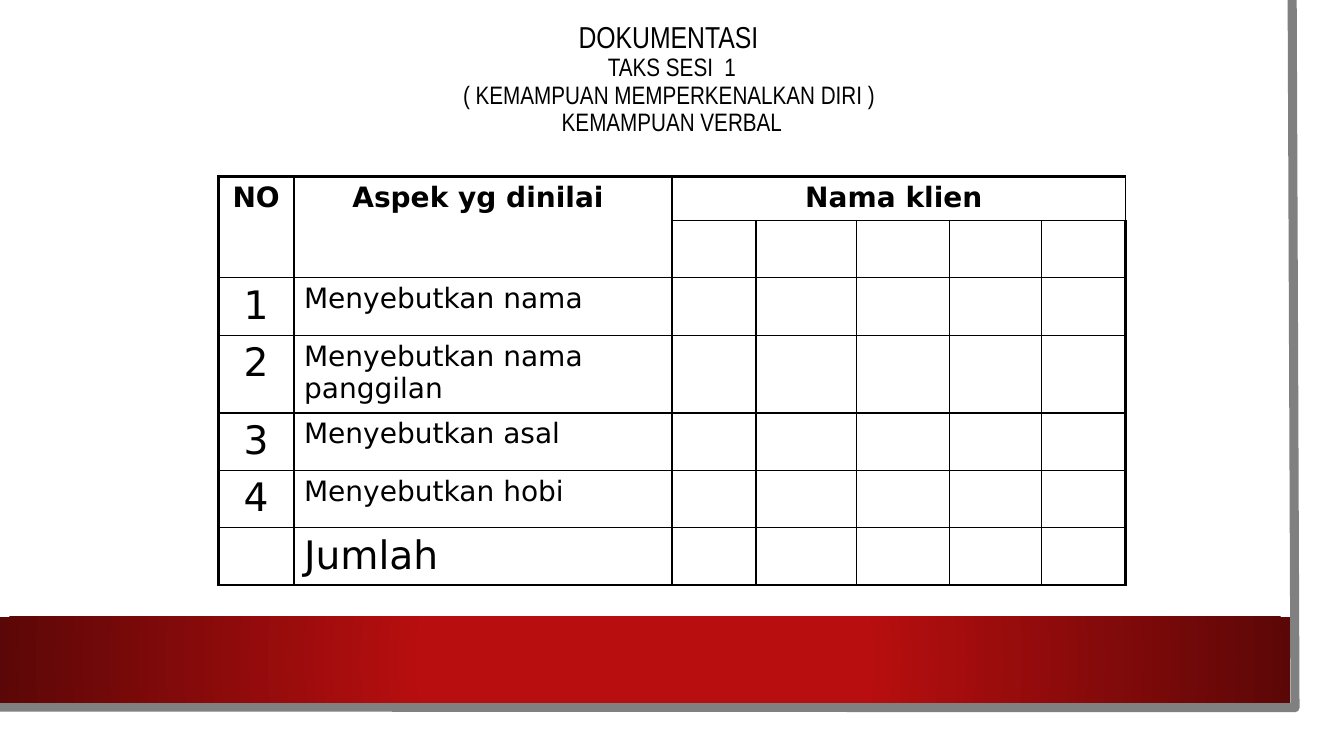
from lxml import etree
from pptx import Presentation
from pptx.dml.color import RGBColor
from pptx.enum import shapes, text
from pptx.oxml import parse_xml
from pptx.oxml.ns import nsdecls, qn
from pptx.util import Pt

HEADING = [
    ("DOKUMENTASI ", 21.6),
    ("TAKS SESI  1", 18),
    ("( KEMAMPUAN MEMPERKENALKAN DIRI ) ", 18),
    ("KEMAMPUAN VERBAL", 18),
]
HEADERS = {0: "NO", 1: "Aspek yg dinilai ", 2: "Nama klien "}
ASPECTS = [
    "Menyebutkan nama",
    "Menyebutkan nama panggilan",
    "Menyebutkan asal",
    "Menyebutkan hobi",
]
TOTAL = "Jumlah"
COLUMNS = [54, 270, 60, 72, 66, 66, 60]
ROWS = [31.5, 41, 41, 55.5, 41, 41, 41]
BLACK, WHITE, GREY = "000000", "FFFFFF", "808080"
RED, DARK_RED = "B80E0F", "5C0707"


def color(value):
    return RGBColor.from_string(value)


def add_panel(slide, left, top, width, height, fill):
    panel = slide.shapes.add_shape(
        shapes.MSO_SHAPE.RECTANGLE, Pt(left), Pt(top), Pt(width), Pt(height))
    panel.shadow.inherit = False
    panel.fill.solid()
    panel.fill.fore_color.rgb = color(fill)
    panel.line.fill.background()
    return panel


def glow_from_center(panel, inner, outer):
    """Replace the solid fill by a gradient that spreads from the middle."""
    properties = panel.element.spPr
    gradient = parse_xml(
        f'<a:gradFill {nsdecls("a")} rotWithShape="1"><a:gsLst>'
        f'<a:gs pos="34000"><a:srgbClr val="{inner}"/></a:gs>'
        f'<a:gs pos="100000"><a:srgbClr val="{outer}"/></a:gs></a:gsLst>'
        '<a:path path="circle"><a:fillToRect l="50000" t="50000" r="50000" b="50000"/>'
        '</a:path></a:gradFill>')
    properties.replace(properties.find(qn("a:solidFill")), gradient)


def add_page_edge(slide):
    builder = slide.shapes.build_freeform(Pt(923), Pt(0))
    builder.add_line_segments([(Pt(925), Pt(505.5)), (Pt(-2), Pt(505))], close=False)
    edge = builder.convert_to_shape()
    edge.shadow.inherit = False
    edge.fill.background()
    edge.line.color.rgb = color(GREY)
    edge.line.width = Pt(6.5)


def add_heading(slide):
    title = slide.shapes.title
    title.element.getparent().append(title.element)  # in front of the panels
    title.left, title.top, title.width, title.height = Pt(48), Pt(21.5), Pt(864), Pt(90)
    frame = title.text_frame
    frame.text = "\v".join(line for line, size in HEADING)
    frame.word_wrap = True
    frame.auto_size = text.MSO_AUTO_SIZE.NONE
    frame.vertical_anchor = text.MSO_ANCHOR.MIDDLE
    frame.margin_bottom = Pt(23)
    paragraph = frame.paragraphs[0]
    paragraph.alignment = text.PP_ALIGN.CENTER
    paragraph.line_spacing = 0.9
    for run, (line, size) in zip(paragraph.runs, HEADING):
        style(run.font, size, "Arial Narrow")


def style(font, size, name="DejaVu Sans", bold=False):
    font.size, font.name, font.bold = Pt(size), name, bold
    font.color.rgb = color(BLACK)


def write(cell, words, size, centered=False, bold=False):
    cell.text_frame.text = words
    paragraph = cell.text_frame.paragraphs[0]
    if centered:
        paragraph.alignment = text.PP_ALIGN.CENTER
    style(paragraph.runs[0].font, size, bold=bold)


def set_borders(cell, widths):
    properties = cell._tc.get_or_add_tcPr()
    for side, width in widths.items():
        line = etree.SubElement(properties, qn(f"a:ln{side}"), w=str(Pt(width)))
        fill = etree.SubElement(line, qn("a:solidFill"))
        etree.SubElement(fill, qn("a:srgbClr"), val=BLACK)


def add_score_table(slide):
    table = slide.shapes.add_table(
        len(ROWS), len(COLUMNS), Pt(156), Pt(126), Pt(sum(COLUMNS)), Pt(sum(ROWS))).table
    table.first_row = table.horz_banding = False
    for column, width in zip(table.columns, COLUMNS):
        column.width = Pt(width)
    for row, height in zip(table.rows, ROWS):
        row.height = Pt(height)

    last_row, last_column = len(ROWS) - 1, len(COLUMNS) - 1
    for r in range(len(ROWS)):
        for c in range(len(COLUMNS)):
            outer = {"L": c == 0, "R": c == last_column, "T": r == 0, "B": r == last_row}
            cell = table.cell(r, c)
            set_borders(cell, {side: 2.25 if edge else 1 for side, edge in outer.items()})
            cell.fill.background()

    for c in (0, 1):
        table.cell(0, c).merge(table.cell(1, c))
    table.cell(0, 2).merge(table.cell(0, last_column))
    for c, header in HEADERS.items():
        write(table.cell(0, c), header, 20, centered=True, bold=True)
    for number, aspect in enumerate(ASPECTS, 1):
        write(table.cell(number + 1, 0), str(number), 28, centered=True)
        write(table.cell(number + 1, 1), aspect, 20)
    write(table.cell(last_row, 1), TOTAL, 28)


def main():
    deck = Presentation()
    deck.slide_width, deck.slide_height = Pt(960), Pt(540)
    slide = deck.slides.add_slide(deck.slide_layouts[5])
    add_panel(slide, 0, 0, 943, 523.5, WHITE)
    add_page_edge(slide)
    band = add_panel(slide, 0, 440.5, 921.5, 61.5, RED)
    glow_from_center(band, RED, DARK_RED)
    add_heading(slide)
    add_score_table(slide)
    deck.save("out.pptx")


if __name__ == "__main__":
    main()
